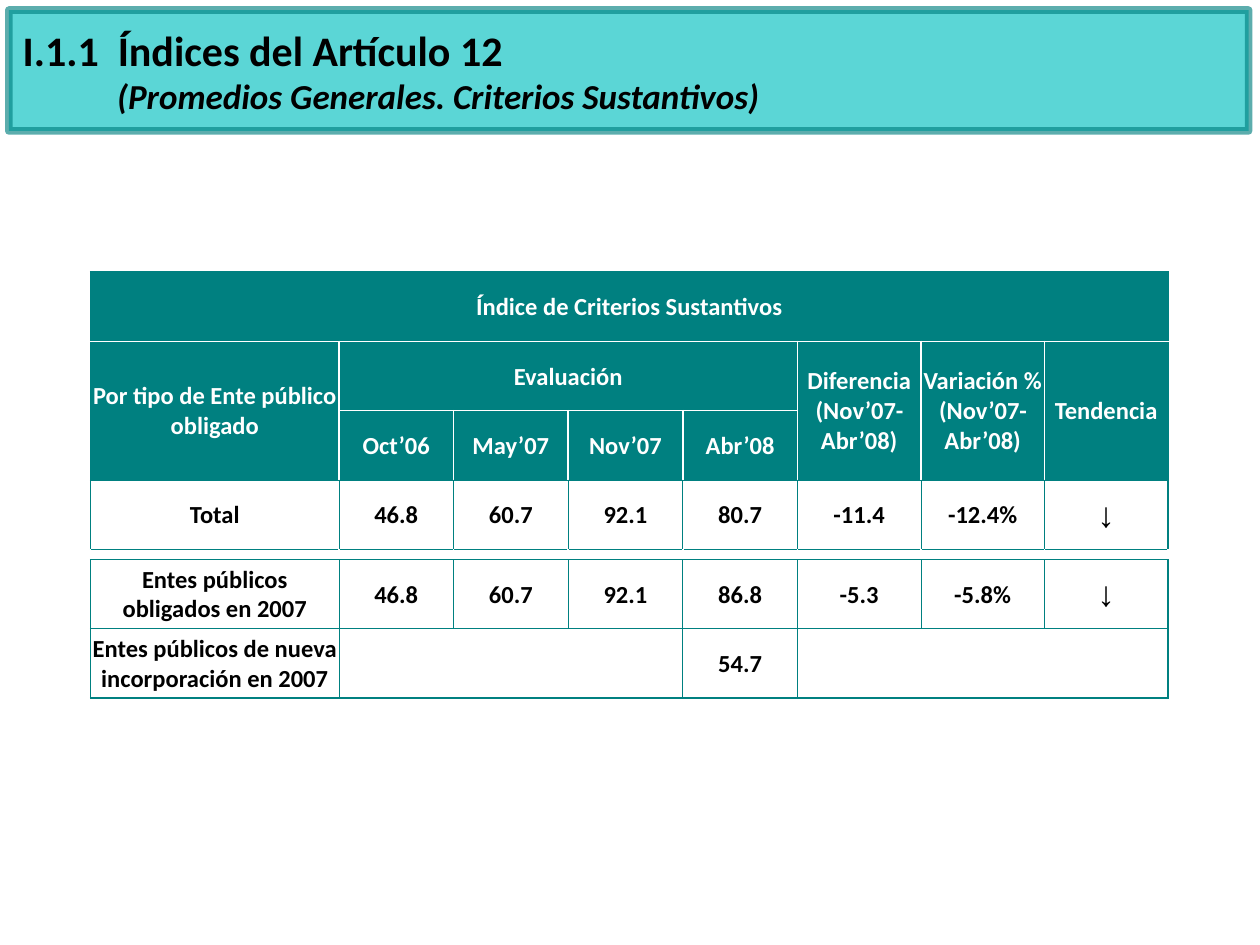
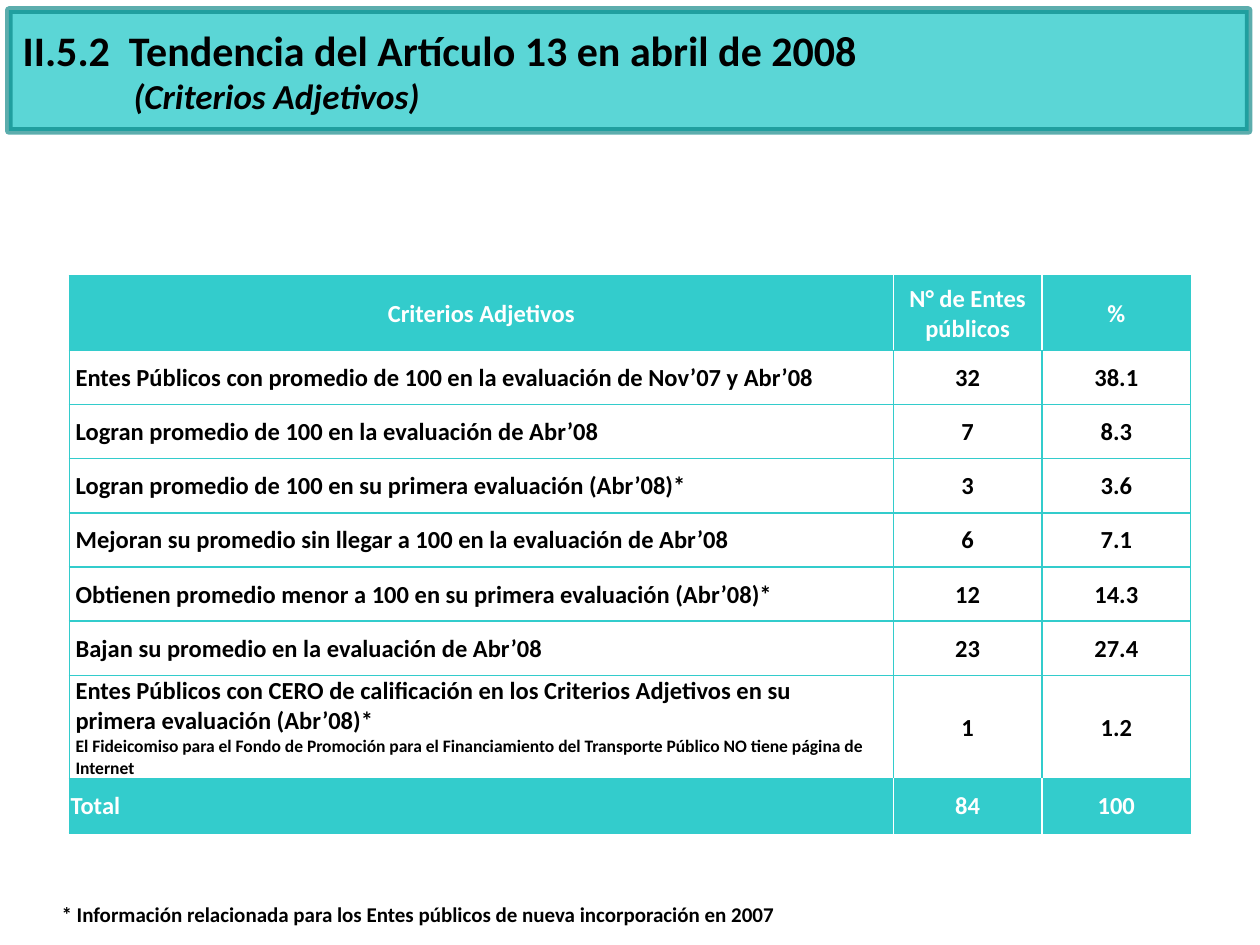
from lxml import etree
from pptx import Presentation
from pptx.dml.color import RGBColor
from pptx.enum.shapes import MSO_SHAPE
from pptx.enum.text import MSO_ANCHOR, MSO_AUTO_SIZE, PP_ALIGN
from pptx.oxml.ns import qn
from pptx.util import Inches, Pt

RECTANGLE = MSO_SHAPE.RECTANGLE
MIDDLE = MSO_ANCHOR.MIDDLE
NO_AUTOFIT = MSO_AUTO_SIZE.NONE
LEFT, CENTER = PP_ALIGN.LEFT, PP_ALIGN.CENTER

TEAL = RGBColor(0x00, 0x80, 0x80)
AQUA = RGBColor(0x33, 0xCC, 0xCC)
WHITE = RGBColor(0xFF, 0xFF, 0xFF)
BLACK = RGBColor(0x00, 0x00, 0x00)

TITLE_ONLY = 5
ARROW = "↓"


def write(p, text, size=14, color=BLACK, font="Calibri", italic=False, align=LEFT):
    p.alignment = align
    r = p.add_run()
    r.text = text
    r.font.name, r.font.size = font, Pt(size)
    r.font.bold, r.font.italic = True, italic
    r.font.color.rgb = color


def set_alpha(color_format_parent, percent):
    for clr in color_format_parent.iter(qn("a:srgbClr")):
        etree.SubElement(clr, qn("a:alpha"), val=str(percent * 1000))


def draw_border(cell, side, color, width):
    tcPr = cell._tc.get_or_add_tcPr()
    ln = etree.SubElement(tcPr, qn(f"a:ln{side}"), w=str(Pt(width)))
    fill = etree.SubElement(ln, qn("a:solidFill"))
    etree.SubElement(fill, qn("a:srgbClr"), val=str(color))


class Deck:
    def __init__(self):
        self.prs = Presentation()
        self.prs.slide_width, self.prs.slide_height = Inches(10), Inches(7.5)
        self.s = None

    def new_slide(self, title, subtitle, subtitle_indent):
        self.s = self.prs.slides.add_slide(self.prs.slide_layouts[TITLE_ONLY])
        self.band()
        self.title(title, subtitle, subtitle_indent)

    def band(self):
        sp = self.s.shapes.add_shape(RECTANGLE, Inches(0.07), Inches(0.08),
                                     Inches(9.84), Inches(0.96))
        sp.shadow.inherit = False
        sp.fill.solid()
        sp.fill.fore_color.rgb = AQUA
        sp.line.color.rgb = TEAL
        sp.line.width = Pt(4.33)
        set_alpha(sp.fill._xPr.find(qn("a:solidFill")), 80)
        set_alpha(sp.line._ln, 64)
        self.s.shapes._spTree.insert(2, sp._element)

    def title(self, title, subtitle, indent):
        sp = self.s.shapes.title
        sp.left, sp.top = Inches(0.08), Inches(0.09)
        sp.width, sp.height = Inches(9.17), Inches(0.94)
        tf = sp.text_frame
        tf.auto_size, tf.vertical_anchor = NO_AUTOFIT, MIDDLE
        write(tf.paragraphs[0], title, size=24)
        p = tf.add_paragraph()
        write(p, subtitle, size=20, italic=True)
        pPr = p._p.get_or_add_pPr()
        pPr.set("marL", str(Inches(indent)))
        pPr.set("indent", "0")

    def note(self, text):
        sp = self.s.shapes.add_textbox(Inches(0.39), Inches(7.11),
                                       Inches(9.38), Inches(0.3))
        sp.text_frame.word_wrap = True
        write(sp.text_frame.paragraphs[0], text, size=12)

    def table(self, left, top, widths, heights, rows, accent, headers,
              merges=(), gaps=(), inner=1, left_column=False):
        """headers are the filled rows; gaps are thin rows without side lines."""
        n_rows, n_cols = len(heights), len(widths)
        frame = self.s.shapes.add_table(n_rows, n_cols, Inches(left), Inches(top),
                                        Inches(sum(widths)), Inches(sum(heights)))
        tbl = frame.table
        tbl.first_row = tbl.horz_banding = False
        for col, width in zip(tbl.columns, widths):
            col.width = Inches(width)
        for row, height in zip(tbl.rows, heights):
            row.height = Inches(height)
        for r1, c1, r2, c2 in merges:
            tbl.cell(r1, c1).merge(tbl.cell(r2, c2))

        for r in range(n_rows):
            for c in range(n_cols):
                cell = tbl.cell(r, c)
                header = r in headers
                if not cell.is_spanned:
                    self.borders(cell, r, c, n_rows, n_cols, accent, headers, gaps, inner)
                cell.fill.solid()
                cell.fill.fore_color.rgb = accent if header else WHITE
                indented = left_column and c == 0 and r > 0
                cell.margin_left = Inches(0.05 if indented and not header else 0.01)
                cell.margin_right = cell.margin_top = Inches(0.01)
                cell.margin_bottom = 0
                cell.vertical_anchor = MIDDLE
                if r in gaps:
                    p = cell.text_frame.paragraphs[0]
                    etree.SubElement(p._p, qn("a:endParaRPr"), sz="100")
                elif rows[r][c]:
                    self.cell_text(cell, rows[r][c], WHITE if header else BLACK,
                                   LEFT if indented else CENTER)

    def borders(self, cell, r, c, n_rows, n_cols, accent, headers, gaps, inner):
        """White between two header cells and beside gaps, accent elsewhere."""
        last_r = r + (cell.span_height if cell.is_merge_origin else 1) - 1
        last_c = c + (cell.span_width if cell.is_merge_origin else 1) - 1
        outer = {"L": c == 0, "R": last_c == n_cols - 1,
                 "T": r == 0, "B": last_r == n_rows - 1}
        header = r in headers
        white = {"L": header, "R": header,
                 "T": header and r - 1 in headers,
                 "B": header and last_r + 1 in headers}
        for side in "LRTB":
            gap_side = r in gaps and side in "LR"
            if gap_side or (white[side] and not outer[side]):
                draw_border(cell, side, WHITE, 1)
            else:
                draw_border(cell, side, accent, 1 if outer[side] else inner)

    def cell_text(self, cell, text, color, align):
        """A line that follows a tab character is set as small print."""
        tf = cell.text_frame
        for i, line in enumerate(text.split("\n")):
            p = tf.add_paragraph() if i else tf.paragraphs[0]
            if line == ARROW:
                write(p, line, size=20, font="Arial", color=color, align=align)
            else:
                size = 10 if line.startswith("\t") else 14
                write(p, line.lstrip("\t"), size=size, color=color, align=align)


def substantive_index(deck):
    deck.new_slide("I.1.1  Índices del Artículo 12",
                   "(Promedios Generales. Criterios Sustantivos)", 0.75)
    period = "(Nov’07-Abr’08)"
    rows = [
        ["Índice de Criterios Sustantivos"] + [""] * 7,
        ["Por tipo de Ente público obligado", "Evaluación", "", "", "",
         f"Diferencia\n{period}", f"Variación %\n{period}", "Tendencia"],
        ["", "Oct’06", "May’07", "Nov’07", "Abr’08", "", "", ""],
        ["Total", "46.8", "60.7", "92.1", "80.7", "-11.4", "-12.4%", ARROW],
        [""] * 8,
        ["Entes públicos obligados en 2007",
         "46.8", "60.7", "92.1", "86.8", "-5.3", "-5.8%", ARROW],
        ["Entes públicos de nueva incorporación en 2007",
         "", "", "", "54.7", "", "", ""],
    ]
    two_row_headers = [(1, c, 2, c) for c in (0, 5, 6, 7)]
    deck.table(0.72, 2.16, [1.97] + [0.91] * 4 + [0.98] * 3,
               [0.55] * 4 + [0.08] + [0.55] * 2, rows, TEAL, headers=(0, 1, 2),
               merges=[(0, 0, 0, 7), (1, 1, 1, 4), (6, 1, 6, 3), (6, 5, 6, 7)]
               + two_row_headers, gaps=(4,), inner=0.5)


def adjective_trend(deck):
    deck.new_slide("II.5.2  Tendencia del Artículo 13 en abril de 2008",
                   "(Criterios Adjetivos)", 0.88)
    zero_score = (
        "Entes Públicos con CERO de calificación en los Criterios Adjetivos en su\n"
        "primera evaluación (Abr’08)*\n"
        "\tEl Fideicomiso para el Fondo de Promoción para el Financiamiento "
        "del Transporte Público NO tiene página de\n"
        "\tInternet")
    rows = [
        ("Criterios Adjetivos", "N° de Entes públicos", "%"),
        ("Entes Públicos con promedio de 100 en la evaluación de Nov’07 y Abr’08",
         "32", "38.1"),
        ("Logran promedio de 100 en la evaluación de Abr’08", "7", "8.3"),
        ("Logran promedio de 100 en su primera evaluación (Abr’08)*", "3", "3.6"),
        ("Mejoran su promedio sin llegar a 100 en la evaluación de Abr’08", "6", "7.1"),
        ("Obtienen promedio menor a 100 en su primera evaluación (Abr’08)*",
         "12", "14.3"),
        ("Bajan su promedio en la evaluación de Abr’08", "23", "27.4"),
        (zero_score, "1", "1.2"),
        ("Total", "84", "100"),
    ]
    deck.table(0.55, 2.19, [6.54, 1.18, 1.18], [0.59] + [0.43] * 6 + [0.82, 0.43],
               rows, AQUA, headers=(0, 8), left_column=True)
    deck.note("* Información relacionada para los Entes públicos de nueva "
              "incorporación en 2007")


def main():
    deck = Deck()
    substantive_index(deck)
    adjective_trend(deck)
    deck.prs.save("out.pptx")


if __name__ == "__main__":
    main()
